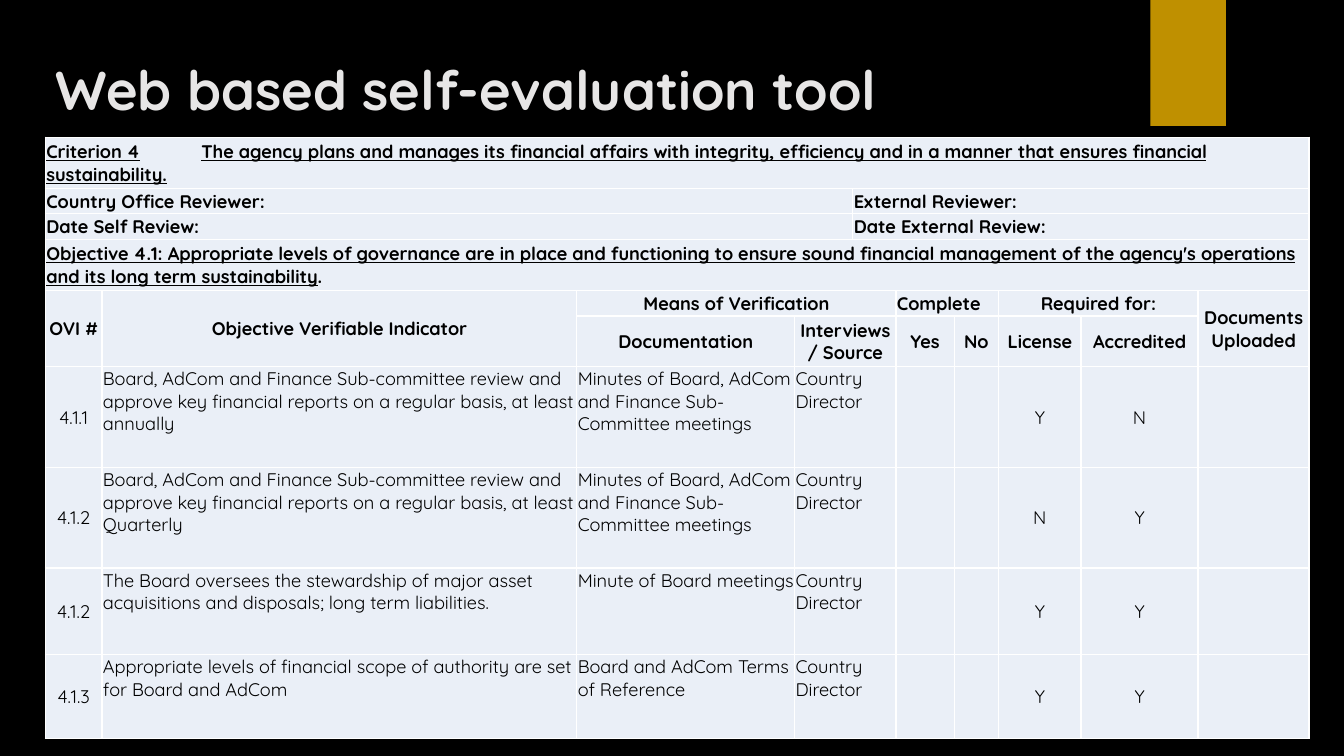
"""Build the slide showing the web based self-evaluation tool."""
from dataclasses import dataclass
from itertools import product

from lxml.etree import SubElement
from pptx import Presentation
from pptx.dml.color import RGBColor
from pptx.enum.shapes import MSO_SHAPE
from pptx.enum.text import MSO_ANCHOR, MSO_AUTO_SIZE, PP_ALIGN
from pptx.oxml.ns import qn
from pptx.util import Pt


@dataclass(frozen=True)
class Theme:
    font: str = "Quicksand"
    back: str = "000000"
    gold: str = "BF9000"
    pale: str = "E7E6E6"
    cell: str = "EAEFF7"
    ink: str = "000000"
    rule: str = "FFFFFF"
    head: float = 39
    body: float = 13


theme = Theme()


def write(frame, text, size=theme.body, color=theme.ink, bold=True, under=False,
          align=PP_ALIGN.LEFT, tab=None):
    """Add one formatted run to the first paragraph of a frame."""
    para = frame.paragraphs[0]
    para.alignment = align
    if tab:
        stops = SubElement(para._p.get_or_add_pPr(), qn("a:tabLst"))
        SubElement(stops, qn("a:tab"), pos=str(Pt(tab)), algn="l")
    run = para.add_run()
    run.text = text
    font = run.font
    font.name, font.size, font.bold, font.underline = theme.font, Pt(size), bold, under
    font.color.rgb = RGBColor.from_string(color)


def border(cell):
    """Rule all four sides of a cell."""
    props = cell._tc.get_or_add_tcPr()
    for side in "LRTB":
        line = SubElement(props, qn(f"a:ln{side}"), w=str(Pt(1)))
        fill = SubElement(line, qn("a:solidFill"))
        SubElement(fill, qn("a:srgbClr"), val=theme.rule)


deck = Presentation()
deck.slide_width, deck.slide_height = Pt(960), Pt(540)
slide = deck.slides.add_slide(deck.slide_layouts[5])
slide.background.fill.solid()
slide.background.fill.fore_color.rgb = RGBColor.from_string(theme.back)

bar = slide.shapes.add_shape(MSO_SHAPE.RECTANGLE, Pt(821.7), Pt(0), Pt(54), Pt(90))
bar.shadow.inherit = False
bar.fill.solid()
bar.fill.fore_color.rgb = RGBColor.from_string(theme.gold)
bar.line.fill.background()

title = slide.shapes.title
title.left, title.top, title.width, title.height = Pt(32.4), Pt(36), Pt(782.6), Pt(110)
title.text_frame.auto_size = MSO_AUTO_SIZE.NONE
title.text_frame.word_wrap = True
title.text_frame.vertical_anchor = MSO_ANCHOR.TOP
write(title.text_frame, "Web based self-evaluation tool", size=theme.head, color=theme.pale)

wide = [40.4, 339.2, 155.6, 41.6, 30.8, 41.6, 31.8, 58.9, 83.6, 79.3]
high = [36.4, 18.3, 18.3, 36.5, 18.3, 36, 72, 72, 61.6, 60.4]
grid = slide.shapes.add_table(len(high), len(wide), Pt(32.4), Pt(98),
                              Pt(sum(wide)), Pt(sum(high))).table
grid.first_row = grid.horz_banding = False
for col, width in zip(grid.columns, wide):
    col.width = Pt(width)
for row, height in zip(grid.rows, high):
    row.height = Pt(height)

for row, col in product(range(len(high)), range(len(wide))):
    cell = grid.cell(row, col)
    border(cell)
    cell.fill.solid()
    cell.fill.fore_color.rgb = RGBColor.from_string(theme.cell)
    cell.margin_left = cell.margin_right = cell.margin_top = Pt(0.72)
    cell.margin_bottom = Pt(0)
    top = row > 5 and col in (1, 2, 3)
    cell.vertical_anchor = MSO_ANCHOR.TOP if top else MSO_ANCHOR.MIDDLE

left, mid = PP_ALIGN.LEFT, PP_ALIGN.CENTER
heads = [
    (1, 0, 1, 4, "Country Office Reviewer:", left),
    (1, 4, 1, 6, "External Reviewer:", left),
    (2, 0, 1, 4, "Date Self Review:", left),
    (2, 4, 1, 6, "Date External Review:", left),
    (4, 0, 2, 1, "OVI #", mid),
    (4, 1, 2, 1, "Objective Verifiable Indicator", mid),
    (4, 2, 1, 3, "Means of Verification", mid),
    (4, 5, 1, 2, "Complete", left),
    (4, 7, 1, 2, "Required for:", mid),
    (4, 9, 2, 1, "Documents Uploaded", mid),
    (5, 2, 1, 1, "Documentation", mid),
    (5, 3, 1, 2, "Interviews/ Source", mid),
    (5, 5, 1, 1, "Yes", mid),
    (5, 6, 1, 1, "No", mid),
    (5, 7, 1, 1, "License", mid),
    (5, 8, 1, 1, "Accredited", mid),
]
for row, col, down, over, text, align in heads:
    cell = grid.cell(row, col)
    if down * over > 1:
        cell.merge(grid.cell(row + down - 1, col + over - 1))
    write(cell.text_frame, text, align=align)

for row in (0, 3):
    grid.cell(row, 0).merge(grid.cell(row, 9))
write(grid.cell(0, 0).text_frame,
      "Criterion 4\tThe agency plans and manages its financial affairs with integrity, "
      "efficiency and in a manner that ensures financial sustainability.",
      under=True, tab=110.7)
goal = grid.cell(3, 0).text_frame
write(goal, "Objective 4.1: Appropriate levels of governance are in place and functioning to "
      "ensure sound financial management of the agency's operations and its long term "
      "sustainability", under=True)
write(goal, ".")

review = ("Board, AdCom and Finance Sub-committee review and approve key financial reports "
          "on a regular basis, at least ")
minutes = "Minutes of Board, AdCom and Finance Sub-Committee meetings"
items = [
    ("4.1.1", review + "annually", minutes, "Y", "N"),
    ("4.1.2", review + "Quarterly", minutes, "N", "Y"),
    ("4.1.2", "The Board oversees the stewardship of major asset acquisitions and disposals; "
     "long term liabilities.", "Minute of Board meetings", "Y", "Y"),
    ("4.1.3", "Appropriate levels of financial scope of authority are set for Board and AdCom",
     "Board and AdCom Terms of Reference", "Y", "Y"),
]
for row, (code, aim, proof, grant, pass_) in enumerate(items, 6):
    grid.cell(row, 3).merge(grid.cell(row, 4))
    texts = {0: code, 1: aim, 2: proof, 3: "Country Director", 7: grant, 8: pass_}
    for col, text in texts.items():
        write(grid.cell(row, col).text_frame, text, bold=False,
              align=left if col in (1, 2, 3) else mid)

deck.save("out.pptx")
